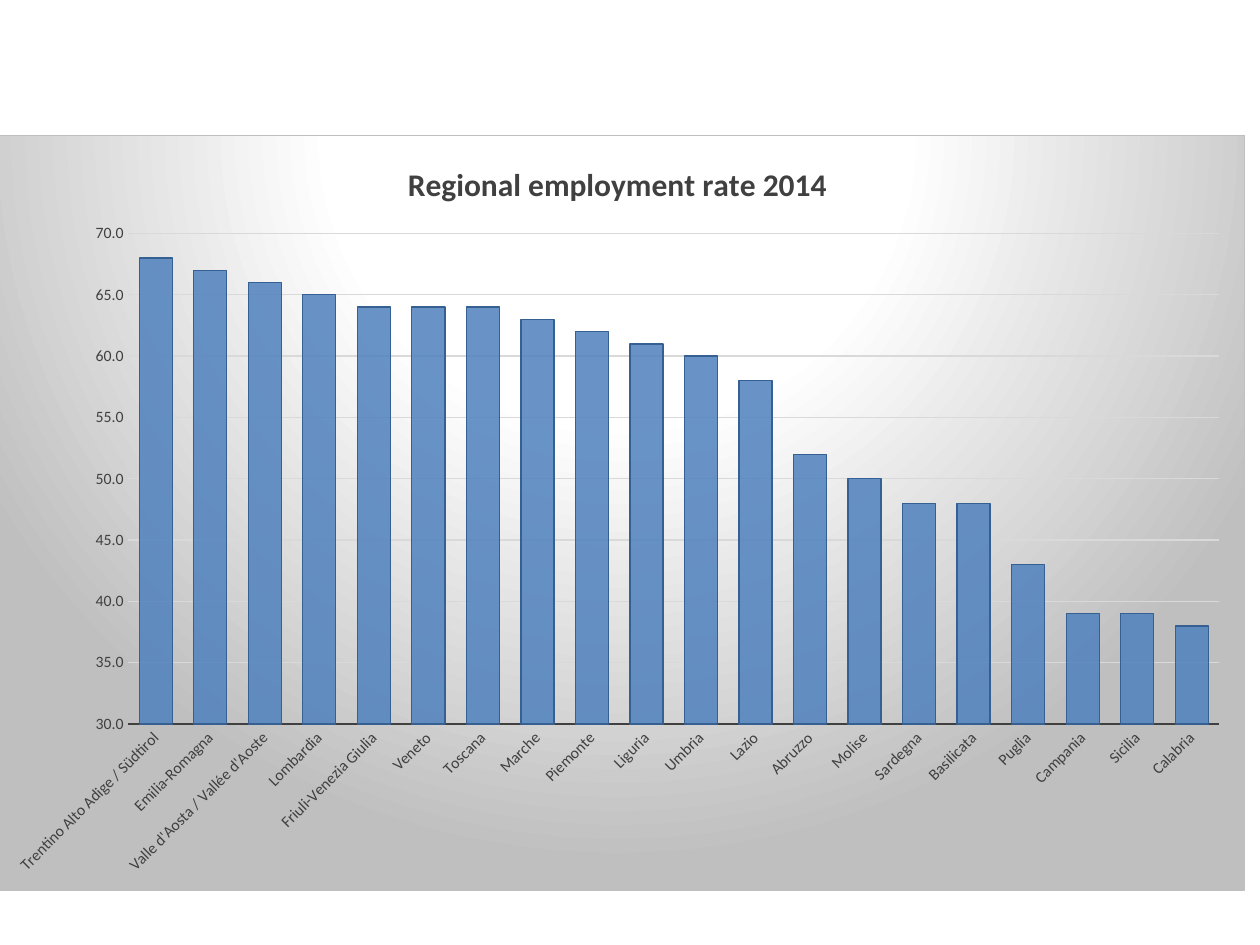
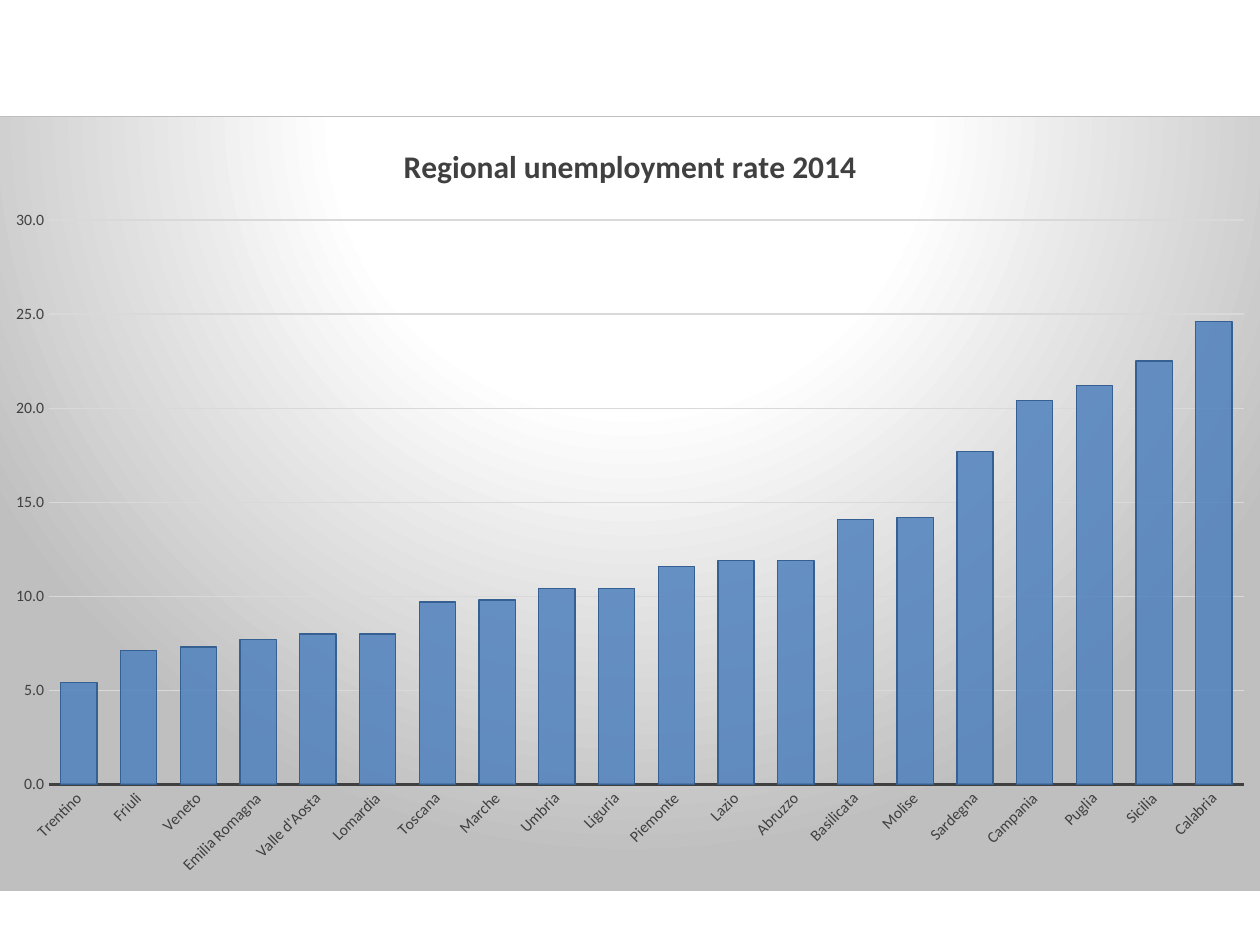
from lxml.etree import SubElement
from pptx import Presentation
from pptx.chart.data import CategoryChartData as Data
from pptx.dml.color import RGBColor as Rgb
from pptx.enum.chart import XL_CHART_TYPE as Kind, XL_TICK_MARK as Tick
from pptx.oxml import parse_xml
from pptx.oxml.ns import nsdecls, qn
from pptx.util import Inches, Pt

HUES = {"text": "404040", "black": "000000", "grid": "D9D9D9", "edge": "BFBFBF",
        "white": "FFFFFF", "bar": "4F81BD", "rim": "376092"}
FACE = "Calibri"
CELL = Inches(0.1)
COLS, ROWS = 100, 75

JOBS = {
    "Trentino Alto Adige / Südtirol": 68, "Emilia-Romagna": 67,
    "Valle d'Aosta / Vallée d'Aoste": 66, "Lombardia": 65,
    "Friuli-Venezia Giulia": 64, "Veneto": 64, "Toscana": 64,
    "Marche": 63, "Piemonte": 62, "Liguria": 61, "Umbria": 60,
    "Lazio": 58, "Abruzzo": 52, "Molise": 50, "Sardegna": 48,
    "Basilicata": 48, "Puglia": 43, "Campania": 39, "Sicilia": 39,
    "Calabria": 38,
}
JOBLESS = {
    "Trentino": 5.4, "Friuli": 7.1, "Veneto": 7.3, "Emilia Romagna": 7.7,
    "Valle d'Aosta": 8, "Lomardia": 8, "Toscana": 9.7, "Marche": 9.8,
    "Umbria": 10.4, "Liguria": 10.4, "Piemonte": 11.6, "Lazio": 11.9,
    "Abruzzo": 11.9, "Basilicata": 14.1, "Molise": 14.2, "Sardegna": 17.7,
    "Campania": 20.4, "Puglia": 21.2, "Sicilia": 22.5, "Calabria": 24.6,
}


def ink(hue):
    """Return the named colour."""
    return Rgb.from_string(HUES[hue])


def style(font, size, hue, bold=False):
    """Set face, size, colour and weight of a font."""
    font.name, font.size, font.bold = FACE, Pt(size), bold
    font.color.rgb = ink(hue)


def rule(line, hue, width):
    """Give a line its colour and width."""
    line.color.rgb = ink(hue)
    line.width = Pt(width)


def glow(chart):
    """Fill the chart area with a round gradient and a thin border."""
    stops = "".join(
        f'<a:gs pos="{at * 1000}"><a:srgbClr val="{HUES[hue]}"/></a:gs>'
        for at, hue in ((0, "white"), (39, "white"), (100, "edge")))
    area = parse_xml(
        f'<c:spPr {nsdecls("c", "a")}><a:gradFill><a:gsLst>{stops}</a:gsLst>'
        '<a:path path="circle"><a:fillToRect l="50000" t="-80000" r="50000" '
        f'b="180000"/></a:path></a:gradFill><a:ln w="{Pt(0.75)}"><a:solidFill>'
        f'<a:srgbClr val="{HUES["edge"]}"/></a:solidFill></a:ln></c:spPr>')
    chart._chartSpace.find(qn("c:chart")).addnext(area)


def place(chart, inner):
    """Set the plot's inner box as shares of the chart's size."""
    plot = chart._chartSpace.find(qn("c:chart")).find(qn("c:plotArea"))
    for old in plot.findall(qn("c:layout")):
        plot.remove(old)
    modes = '<c:xMode val="edge"/><c:yMode val="edge"/>'
    sides = "".join(f'<c:{key} val="{part}"/>' for key, part in zip("xywh", inner))
    plot.insert(0, parse_xml(
        f'<c:layout {nsdecls("c")}><c:manualLayout><c:layoutTarget val="inner"/>'
        f'{modes}{sides}</c:manualLayout></c:layout>'))


def axes(chart, low, high):
    """Style both axes, slant the region names and set the scale."""
    names, rates = chart.category_axis, chart.value_axis
    for axis in (names, rates):
        axis.major_tick_mark = axis.minor_tick_mark = Tick.NONE
        style(axis.tick_labels.font, 9, "text")
    rule(names.format.line, "text", 1.5)
    slant = names._element.find(qn("c:txPr")).find(qn("a:bodyPr"))
    slant.set("rot", "-2700000")
    slant.set("vert", "horz")
    rates.minimum_scale, rates.maximum_scale, rates.major_unit = low, high, 5
    rates.format.line.fill.background()
    rates.has_major_gridlines = True
    rule(rates.major_gridlines.format.line, "grid", 0.75)
    rates.tick_labels.number_format = "0.0"
    rates.tick_labels.number_format_is_linked = False


def bars(chart):
    """Draw the bars in see-through blue with a dark rim."""
    plot = chart.plots[0]
    plot.gap_width, plot.vary_by_categories = 65, False
    row = plot.series[0]
    row.invert_if_negative = False
    row.format.fill.solid()
    row.format.fill.fore_color.rgb = ink("bar")
    tint = row._element.find(qn("c:spPr")).find(qn("a:solidFill"))[0]
    SubElement(tint, qn("a:alpha")).set("val", "85000")
    rule(row.format.line, "rim", 0.75)


def rank(deck, title, rates, box, low, high, inner=None):
    """Add a slide with a column chart of regional rates in a grid box."""
    slide = deck.slides.add_slide(deck.slide_layouts[6])
    data = Data(number_format="0.0")
    data.categories = list(rates)
    data.add_series("Series 1", list(rates.values()))
    frame = [round(part * CELL) for part in box]
    chart = slide.shapes.add_chart(Kind.COLUMN_CLUSTERED, *frame, data).chart
    style(chart.font, 10, "black")
    chart.has_legend = False
    chart.has_title = True
    head = chart.chart_title.text_frame
    head.text = title
    style(head.paragraphs[0].font, 18, "text", True)
    chart.chart_title.include_in_layout = False
    glow(chart)
    axes(chart, low, high)
    bars(chart)
    if inner:
        place(chart, inner)


def main():
    """Build and save the deck."""
    deck = Presentation()
    deck.slide_width, deck.slide_height = COLS * CELL, ROWS * CELL
    rank(deck, "Regional employment rate 2014", JOBS,
         (-0.8, 10.7, 99.6, 60), 30, 70, (0.11, 0.13, 0.87, 0.65))
    rank(deck, "Regional unemployment rate 2014", JOBLESS,
         (-0.8, 9.18, 101.6, 61.52), 0, 30)
    deck.save("out.pptx")


if __name__ == "__main__":
    main()
